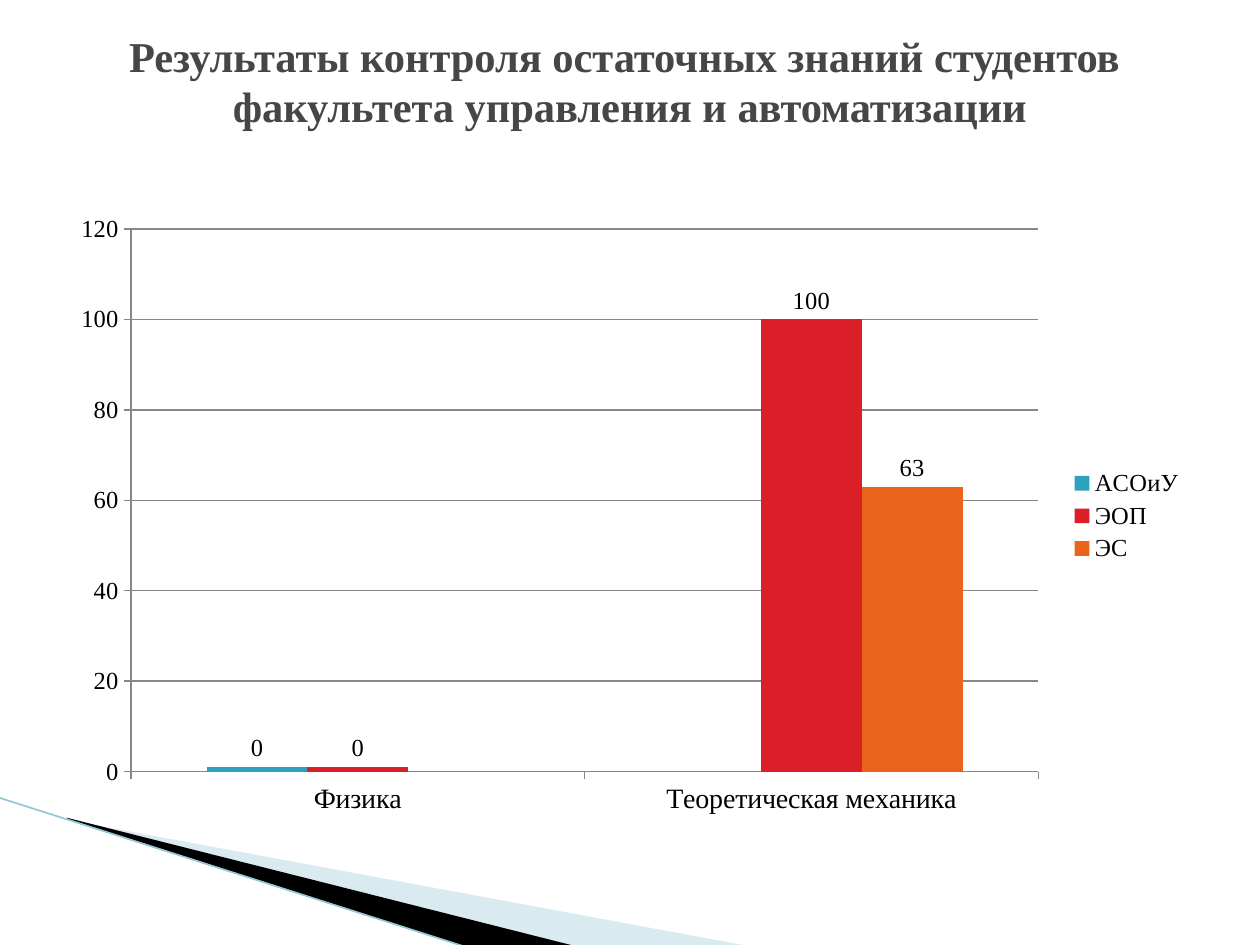
"""Build a slide with a clustered column chart of students' retained knowledge."""
from lxml import etree
from pptx import Presentation
from pptx.chart.data import CategoryChartData
from pptx.dml.color import RGBColor
from pptx.enum.chart import XL_CHART_TYPE, XL_LABEL_POSITION, XL_LEGEND_POSITION, XL_TICK_MARK
from pptx.enum.shapes import MSO_CONNECTOR
from pptx.enum.text import MSO_ANCHOR, PP_ALIGN
from pptx.oxml import parse_xml
from pptx.oxml.ns import nsdecls, qn
from pptx.util import Inches, Pt

COLUMNS = XL_CHART_TYPE.COLUMN_CLUSTERED
OUTSIDE_END = XL_LABEL_POSITION.OUTSIDE_END
LEGEND_RIGHT = XL_LEGEND_POSITION.RIGHT
TICK_OUTSIDE = XL_TICK_MARK.OUTSIDE
STRAIGHT = MSO_CONNECTOR.STRAIGHT
MIDDLE = MSO_ANCHOR.MIDDLE
CENTER = PP_ALIGN.CENTER

FONT = "Times New Roman"
CHART_FONT = "Courier New"
BLACK = RGBColor(0x00, 0x00, 0x00)
TITLE_GREY = RGBColor(0x46, 0x46, 0x46)
AXIS_GREY = RGBColor(0x87, 0x87, 0x87)
PALE_BLUE = RGBColor(0xA0, 0xCB, 0xDC)
EDGE_BLUE = RGBColor(0x97, 0xC5, 0xD8)
TEAL = RGBColor(0x2D, 0xA2, 0xBF)
RED = RGBColor(0xDA, 0x1F, 0x28)
ORANGE = RGBColor(0xEB, 0x64, 0x1B)

TITLE = "Результаты контроля остаточных знаний студентов \vфакультета управления и автоматизации"
CATEGORIES = ["Физика", "Теоретическая механика"]
SERIES = [
    ("АСОиУ", (1, None), TEAL, {0: "0"}),
    ("ЭОП", (1, 100), RED, {0: "0"}),
    ("ЭС", (None, 63), ORANGE, {}),
]
WEDGES = [
    ([(0.55, 6.51), (5.95, 7.51), (4.56, 7.51), (0.55, 6.5)], PALE_BLUE, 40),
    ([(0.53, 6.49), (4.57, 7.51), (3.72, 7.52), (0.54, 6.5)], BLACK, 100),
]
EDGE = (-0.01, 6.33, 3.71, 7.52)
TITLE_BOX = (0.5, 0.3, 9, 1.25)
CHART_BOX = (0.5, 1.62, 9, 4.95)
PLOT_LAYOUT = {"x": 0.06, "y": 0.04, "w": 0.8, "h": 0.87}


def inches(values):
    return [Inches(value) for value in values]


def set_font(font, size, color=BLACK, name=FONT, bold=False):
    font.name, font.size, font.bold = name, Pt(size), bold
    font.color.rgb = color


def add_wedge(slide, points, color, opacity):
    start, *others = [inches(point) for point in points]
    builder = slide.shapes.build_freeform(*start)
    builder.add_line_segments(others, close=True)
    wedge = builder.convert_to_shape()
    wedge.shadow.inherit = False
    wedge.fill.solid()
    wedge.fill.fore_color.rgb = color
    wedge.line.fill.background()
    if opacity < 100:
        fill_color = wedge.fill._xPr.find(".//" + qn("a:srgbClr"))
        etree.SubElement(fill_color, qn("a:alpha"), val=str(opacity * 1000))


def add_edge(slide):
    edge = slide.shapes.add_connector(STRAIGHT, *inches(EDGE))
    edge.line.color.rgb = EDGE_BLUE
    edge.line.width = Pt(0.95)
    etree.SubElement(edge._element.spPr, qn("a:effectLst"))


def add_text(slide, text, box, size, color, bold=False, line_spacing=29, bottom=0.57):
    shape = slide.shapes.add_textbox(*inches(box))
    frame = shape.text_frame
    frame.word_wrap = True
    frame.vertical_anchor = MIDDLE
    frame.margin_top, frame.margin_bottom = 0, Inches(bottom)
    paragraph = frame.paragraphs[0]
    paragraph.text = text
    paragraph.alignment = CENTER
    paragraph.line_spacing = Pt(line_spacing)
    for run in paragraph.runs:
        set_font(run.font, size, color, bold=bold)


def format_axis(axis, size):
    set_font(axis.tick_labels.font, size)
    axis.major_tick_mark = TICK_OUTSIDE
    axis.format.line.color.rgb = AXIS_GREY


def format_series(series, color, point_labels):
    series.format.fill.solid()
    series.format.fill.fore_color.rgb = color
    series.invert_if_negative = False
    labels = series.data_labels
    labels.show_value = True
    labels.position = OUTSIDE_END
    set_font(labels.font, 14)
    for index, text in point_labels.items():
        label = series.points[index].data_label
        label.text_frame.text = text
        set_font(label.text_frame.paragraphs[0].runs[0].font, 14)
        label.position = OUTSIDE_END


def set_plot_layout(chart):
    plot_area = chart._chartSpace.chart.plotArea
    for layout in plot_area.findall(qn("c:layout")):
        plot_area.remove(layout)
    modes = '<c:layoutTarget val="inner"/><c:xMode val="edge"/><c:yMode val="edge"/>'
    sizes = "".join(f'<c:{key} val="{value}"/>' for key, value in PLOT_LAYOUT.items())
    plot_area.insert(0, parse_xml(
        f'<c:layout {nsdecls("c")}><c:manualLayout>{modes}{sizes}</c:manualLayout></c:layout>'))


def add_results_chart(slide):
    data = CategoryChartData()
    data.categories = CATEGORIES
    for name, values, *_ in SERIES:
        data.add_series(name, values)
    chart = slide.shapes.add_chart(COLUMNS, *inches(CHART_BOX), data).chart
    set_font(chart.font, 18, name=CHART_FONT)
    chart.has_title = False
    chart.has_legend = True
    chart.legend.position = LEGEND_RIGHT
    chart.legend.include_in_layout = False
    set_font(chart.legend.font, 14)
    plot = chart.plots[0]
    plot.vary_by_categories = False
    plot.gap_width, plot.overlap = 150, 0
    for series, (_, _, color, point_labels) in zip(plot.series, SERIES):
        format_series(series, color, point_labels)
    format_axis(chart.category_axis, 16)
    value_axis = chart.value_axis
    format_axis(value_axis, 14)
    value_axis.minimum_scale, value_axis.maximum_scale = 0, 120
    value_axis.major_unit = 20
    value_axis.has_major_gridlines = True
    value_axis.major_gridlines.format.line.color.rgb = AXIS_GREY
    set_plot_layout(chart)


def main():
    presentation = Presentation()
    presentation.slide_width, presentation.slide_height = Inches(10), Inches(7.5)
    slide = presentation.slides.add_slide(presentation.slide_layouts[6])
    for wedge in WEDGES:
        add_wedge(slide, *wedge)
    add_edge(slide)
    add_results_chart(slide)
    add_text(slide, TITLE, TITLE_BOX, 24.3, TITLE_GREY, bold=True)
    presentation.save("out.pptx")


if __name__ == "__main__":
    main()
